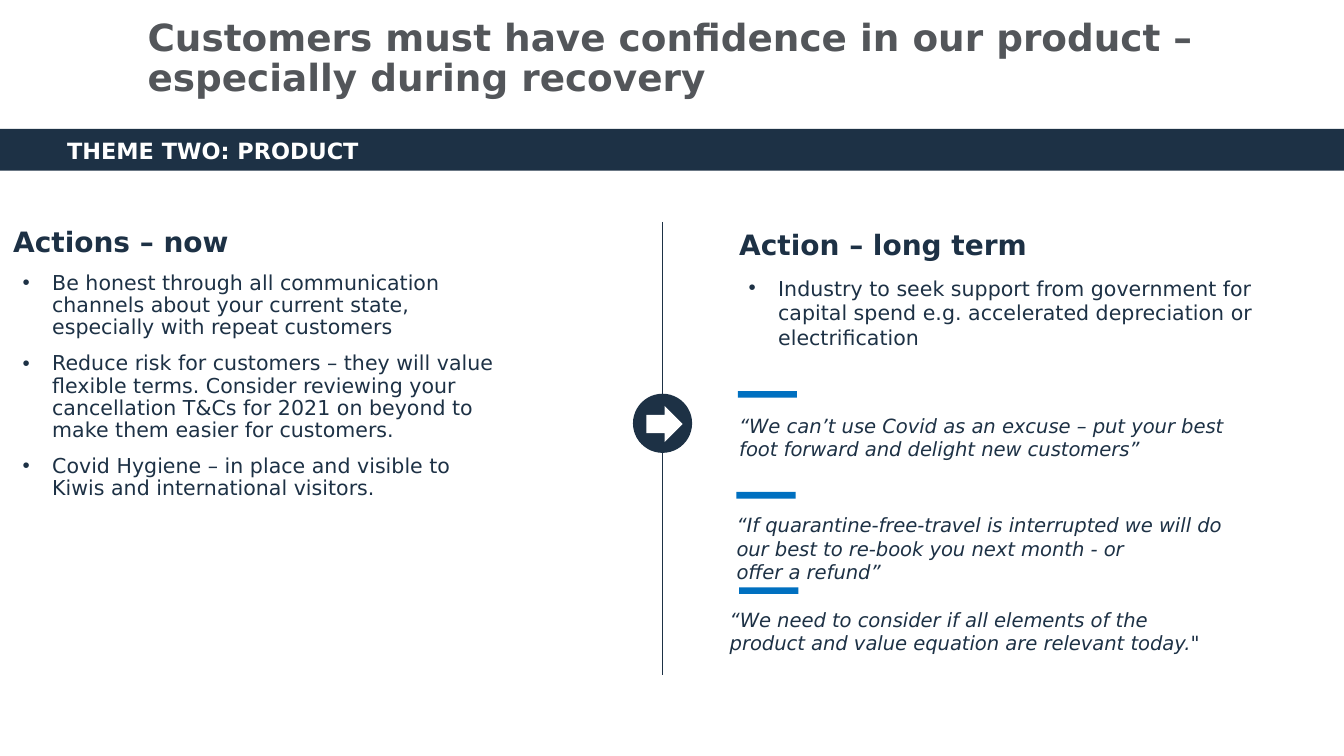
from lxml import etree
from pptx import Presentation
from pptx import util as u
from pptx.dml import color
from pptx.enum import shapes, text
from pptx.oxml import ns

NAVY, BLUE, GREY, WHITE = "1D3145", "0070C0", "53565A", "FFFFFF"
TIE, HARD_SPACE = "~", chr(160)


def rgb(value):
    return color.RGBColor.from_string(value)


def write(paragraph, words, size=11, ink=NAVY, bold=False, italic=False,
          before=0, after=0, spacing=1.0, indent=0, hanging=0, bullet=None):
    properties = paragraph._p.get_or_add_pPr()
    properties.set("marL", str(u.Inches(indent)))
    properties.set("indent", str(u.Inches(-hanging)))
    if bullet:
        etree.SubElement(properties, ns.qn("a:buFont")).set("typeface", "Arial")
        etree.SubElement(properties, ns.qn("a:buChar")).set("char", bullet)
    paragraph.line_spacing = spacing
    paragraph.space_before, paragraph.space_after = u.Pt(before), u.Pt(after)
    run = paragraph.add_run()
    run.text = words.replace(TIE, HARD_SPACE)
    run.font.name, run.font.size = "DejaVu Sans", u.Pt(size)
    run.font.bold, run.font.italic = bold, italic
    run.font.color.rgb = rgb(ink)


class Deck:
    """Holds the style and the current slide, and draws each kind of element."""

    def __init__(self, width):
        self.file = Presentation()
        self.file.slide_width = u.Inches(width)
        self.file.slide_height = u.Inches(width) * 9 // 16
        self.slide = self.file.slides.add_slide(self.file.slide_layouts[6])

    def shape(self, kind, left, top, width, height, fill):
        block = self.slide.shapes.add_shape(kind, *map(u.Inches, (left, top, width, height)))
        block.shadow.inherit = False
        block.fill.solid()
        block.fill.fore_color.rgb = rgb(fill)
        block.line.fill.background()

    def line(self, x, top, bottom, ink, weight):
        divider = self.slide.shapes.add_connector(
            shapes.MSO_CONNECTOR.STRAIGHT, *map(u.Inches, (x, top, x, bottom)))
        divider.line.color.rgb, divider.line.width = rgb(ink), u.Pt(weight)
        etree.SubElement(divider._element.spPr, ns.qn("a:effectLst"))

    def text(self, left, top, width, height, paragraphs, insets=(0, 0.04, 0.07, 0.04),
             anchor=text.MSO_ANCHOR.TOP):
        frame = self.slide.shapes.add_textbox(
            *map(u.Inches, (left, top, width, height))).text_frame
        frame.word_wrap, frame.vertical_anchor = True, anchor
        (frame.margin_left, frame.margin_top,
         frame.margin_right, frame.margin_bottom) = map(u.Inches, insets)
        for number, (words, style) in enumerate(paragraphs):
            paragraph = frame.add_paragraph() if number else frame.paragraphs[0]
            write(paragraph, words, **style)

    def actions(self, left, top, width, height, heading, points, before, spacing, **box):
        heading_style = dict(size=15, bold=True, spacing=spacing)
        point_style = dict(bullet="•", indent=0.29, hanging=0.22, before=before, spacing=spacing)
        paragraphs = [(heading, heading_style)] + [(point, point_style) for point in points]
        self.text(left, top, width, height, paragraphs, **box)

    def quote(self, left, top, width, height, words, inset, bar_left, bar_top):
        self.shape(shapes.MSO_SHAPE.RECTANGLE, bar_left, bar_top, 0.44, 0.05, BLUE)
        style = dict(size=10.5, italic=True, indent=0.07, after=0.8)
        self.text(left, top, width, height, [(words, style)], insets=(inset, 0.04, 0.07, 0.04))


def main():
    deck = Deck(10)
    wide = (0.1, 0.05, 0.1, 0.05)

    title = "Customers must have confidence in our product – especially during recovery"
    deck.text(1, 0.22, 9, 0.44, [(title, dict(size=20, ink=GREY, bold=True, spacing=0.9))],
              insets=wide, anchor=text.MSO_ANCHOR.MIDDLE)
    deck.shape(shapes.MSO_SHAPE.RECTANGLE, 0, 0.96, 10, 0.31, NAVY)
    deck.text(0.5, 0.98, 3.84, 0.38,
              [("THEME TWO: PRODUCT", dict(size=12, ink=WHITE, bold=True))])

    deck.actions(0, 1.65, 3.84, 2.49, "Actions – now", [
        "Be honest through all communication channels about your current state, "
        "especially with repeat customers",
        "Reduce risk for customers~–~they will~value flexible terms.~Consider reviewing "
        "your cancellation T&Cs for 2021 on beyond to make them easier for customers.",
        "Covid Hygiene – in place and visible to Kiwis and international visitors.",
    ], before=7.5, spacing=0.9, insets=wide)
    deck.actions(5.5, 1.65, 4.25, 1.16, "Action – long term", [
        "Industry to seek support from government for capital spend e.g. accelerated "
        "depreciation or electrification",
    ], before=8, spacing=1.0)

    deck.line(4.93, 1.65, 5.02, NAVY, 0.5)
    deck.shape(shapes.MSO_SHAPE.OVAL, 4.71, 2.93, 0.44, 0.44, NAVY)
    deck.shape(shapes.MSO_SHAPE.RIGHT_ARROW, 4.81, 3.02, 0.27, 0.27, WHITE)

    deck.quote(5.36, 3.04, 3.95, 0.43,
               "“We can’t use Covid as an excuse – put your best foot forward and "
               "delight new customers”", inset=0.07, bar_left=5.49, bar_top=2.91)
    deck.quote(5.34, 3.78, 4.07, 0.61,
               "“If quarantine-free-travel is interrupted we will~do our best to re-book "
               "you next month - or offer~a~refund”", inset=0.07, bar_left=5.48, bar_top=3.66)
    deck.quote(5.36, 4.48, 3.77, 0.51,
               "“We need to consider if all elements of the product and value equation "
               "are relevant today.\"", inset=0, bar_left=5.5, bar_top=4.37)

    deck.file.save("out.pptx")


if __name__ == "__main__":
    main()
